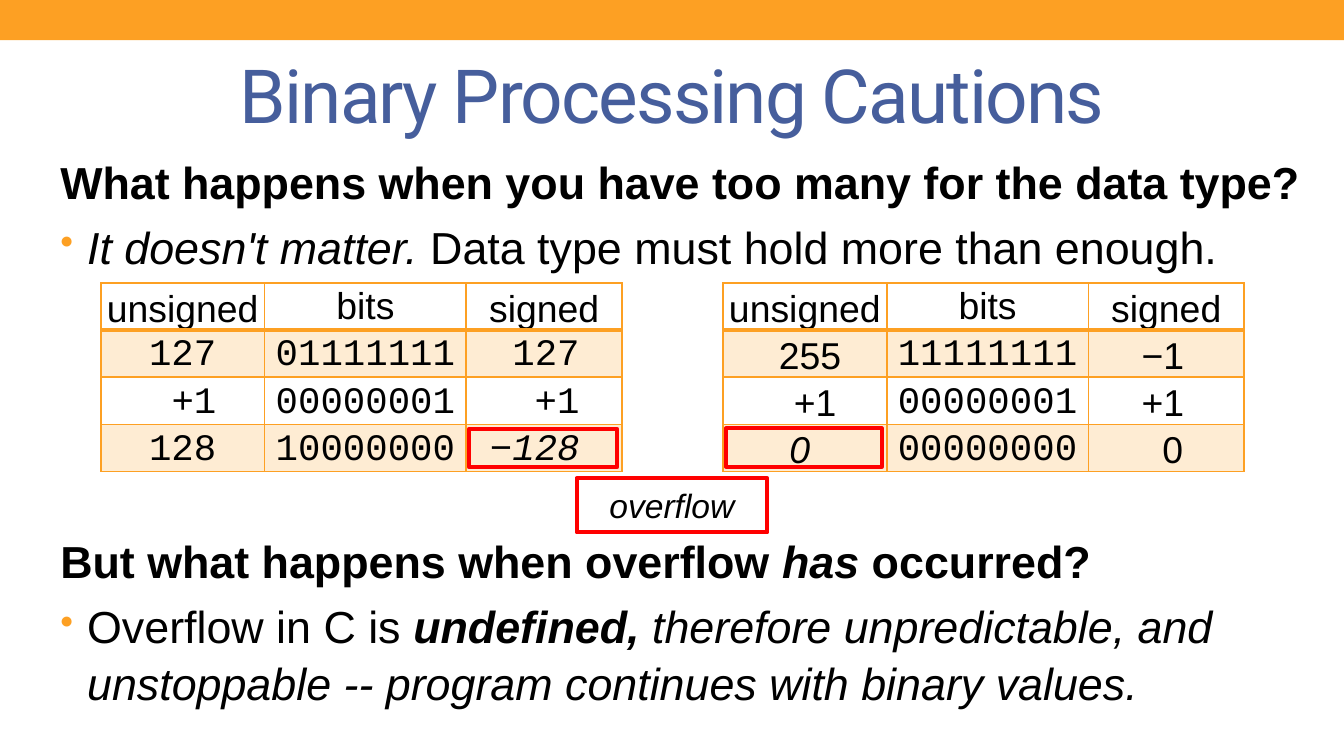
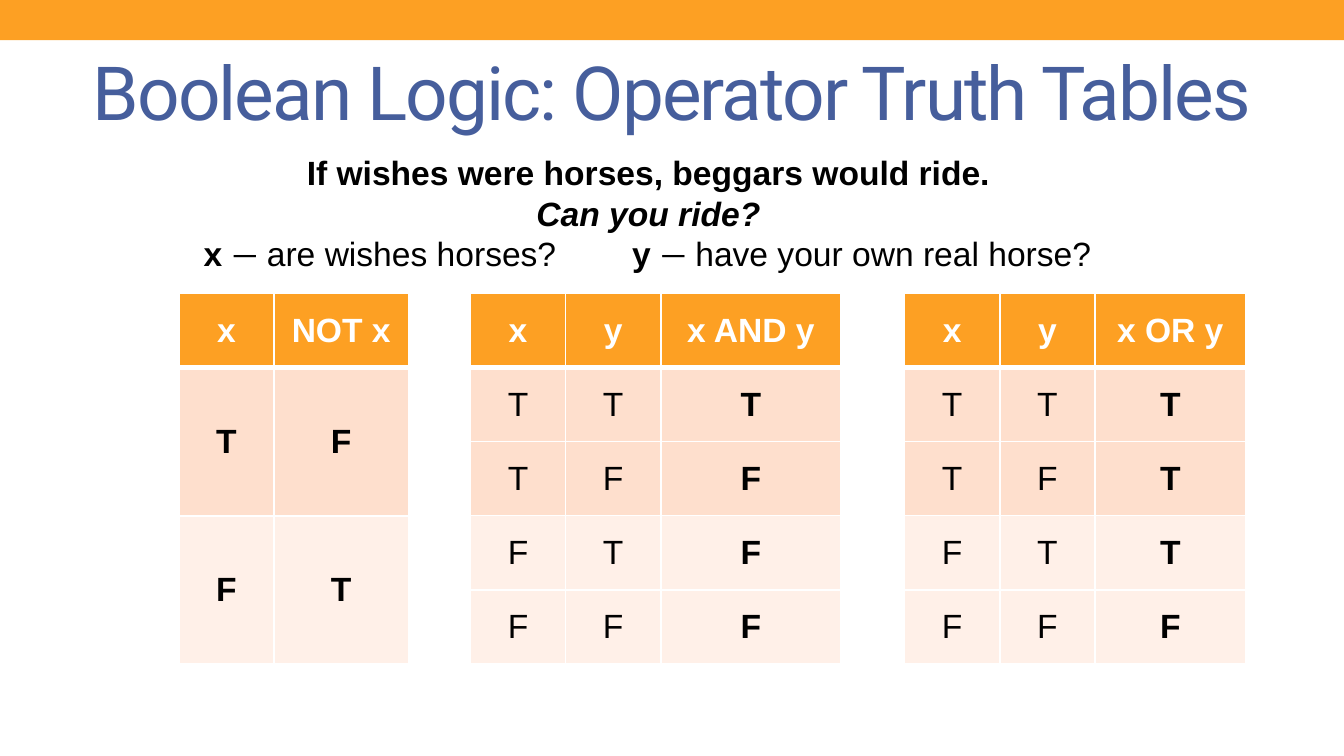
import itertools

import pptx
import pptx.dml.color
import pptx.enum.shapes
import pptx.enum.text
import pptx.oxml
import pptx.oxml.ns
import pptx.util

Pt = pptx.util.Pt
RGB = pptx.dml.color.RGBColor.from_string
ALIGN = pptx.enum.text.PP_ALIGN
ANCHOR = pptx.enum.text.MSO_ANCHOR
RECT = pptx.enum.shapes.MSO_SHAPE.RECTANGLE
NS = pptx.oxml.ns.nsdecls("a")

HUES = {"band": "FDA023", "title": "465E9C", "ink": "000000", "white": "FFFFFF",
        "alert": "FF0000", "peach": "FEDFCD", "pale": "FFF0E8"}
# Flags: m mono, t dash, r title font, b bold, i italic, l left, c middle
FONTS = {"m": "Courier New", "t": "Lato", "r": "Roboto"}


def write(par, runs, size, hue="ink"):
    """Add runs of (text, flags) to a paragraph."""
    for text, flags in runs:
        run = par.add_run()
        run.text = text
        face = next((FONTS[f] for f in flags if f in FONTS), "Arial")
        look = {"name": face, "size": Pt(size), "bold": "b" in flags, "italic": "i" in flags}
        for key, val in look.items():
            setattr(run.font, key, val)
        run.font.color.rgb = RGB(HUES[hue])


def grid(slide, left, top, cols, rows, cells, fills, edge, thick, size, inset, head="ink", alpha=100):
    """Add a table; a cell is (text or runs, flags, left pad, right pad)."""
    table = slide.shapes.add_table(len(rows), len(cols), Pt(left), Pt(top),
                                   Pt(sum(cols)), Pt(sum(rows))).table
    table.first_row = table.horz_banding = False
    for col, wide in zip(table.columns, cols):
        col.width = Pt(wide)
    for row, tall in zip(table.rows, rows):
        row.height = Pt(tall)
    for r, c in itertools.product(range(len(rows)), range(len(cols))):
        text, flags, lead, trail = (*cells[r][c], 0, 0)[:4]
        cell = table.cell(r, c)
        look = {"margin_left": Pt(inset + lead), "margin_right": Pt(inset + trail),
                "margin_top": Pt(inset / 2), "margin_bottom": 0 if inset < 1 else Pt(inset / 2),
                "vertical_anchor": ANCHOR.MIDDLE if "c" in flags else ANCHOR.BOTTOM}
        for key, val in look.items():
            setattr(cell, key, val)
        par = cell.text_frame.paragraphs[0]
        par.alignment = ALIGN.LEFT if "l" in flags else ALIGN.CENTER
        runs = text if isinstance(text, list) else [(text, flags)]
        write(par, runs, size, "ink" if r else head)
        # Fill, then the four borders ahead of it
        props = cell._tc.get_or_add_tcPr()
        if fills[r]:
            cell.fill.solid()
            cell.fill.fore_color.rgb = RGB(HUES[fills[r]])
            if alpha < 100:
                tint = props.find(".//" + pptx.oxml.ns.qn("a:srgbClr"))
                tint.append(pptx.oxml.parse_xml(f'<a:alpha {NS} val="{alpha * 1000}"/>'))
        else:
            cell.fill.background()
        for n, side in enumerate("LRTB"):
            bold = (r, side) in ((0, "B"), (1, "T"))
            props.insert(n, pptx.oxml.parse_xml(
                f'<a:ln{side} {NS} w="{Pt(thick if bold else 1)}"><a:solidFill>'
                f'<a:srgbClr val="{HUES[edge]}"/></a:solidFill></a:ln{side}>'))


deck = pptx.Presentation()
deck.slide_width, deck.slide_height = Pt(720), Pt(405)
plan = deck.slide_layouts[5]

# Titles
slides = []
for name, top in (("Binary Processing Cautions", 21), ("Boolean Logic: Operator Truth Tables", 19.5)):
    slide = deck.slides.add_slide(plan)
    slides.append(slide)
    title = slide.shapes.title
    for key, val in {"left": 36, "top": top, "width": 648, "height": 58}.items():
        setattr(title, key, Pt(val))
    title.text_frame.vertical_anchor = ANCHOR.MIDDLE
    par = title.text_frame.paragraphs[0]
    par.alignment = ALIGN.CENTER
    write(par, [(name, "r")], 40, "title")
    par.runs[0]._r.get_or_add_rPr().set("spc", "-100")
bits, logic = slides

# Shared band, kept on the layout
band = bits.shapes.add_shape(RECT, 0, 0, Pt(720), Pt(21.5))
band.shadow.inherit = False
band.fill.solid()
band.fill.fore_color.rgb = RGB(HUES["band"])
band.line.fill.background()
plan.shapes.element.insert(2, band.element)

# Slide 1: body text, with a gap for the tables
body = bits.shapes.add_textbox(Pt(25.2), Pt(77.8), Pt(694.8), Pt(317.5)).text_frame
body.word_wrap = True
points = [
    (0, False, [("What happens when you have too many for the data type?", "b")]),
    (4.8, True, [("It doesn't matter. ", "i"), ("Data type must hold more than enough.", "")]),
    (138, False, [("But what happens when overflow ", "b"), ("has ", "bi"), ("occurred?", "b")]),
    (4.8, True, [("Overflow in C is ", ""), ("undefined, ", "bi"),
                 ("therefore unpredictable, and unstoppable -- program continues with binary values.", "i")]),
]
for n, (gap, dot, runs) in enumerate(points):
    par = body.add_paragraph() if n else body.paragraphs[0]
    par.line_spacing = 1.05
    par.space_before = Pt(gap)
    if dot:
        props = par._p.get_or_add_pPr()
        props.set("marL", str(Pt(14.4)))
        props.set("indent", str(-Pt(14.4)))
        for tag in (f'<a:buClr {NS}><a:srgbClr val="{HUES["band"]}"/></a:buClr>',
                    f'<a:buSzPct {NS} val="85000"/>', f'<a:buChar {NS} char="•"/>'):
            props.append(pptx.oxml.parse_xml(tag))
    write(par, runs, 24)

# Slide 1: overflow tables
heads = [("unsigned", ""), ("bits", "c"), ("signed", "")]
signed = [
    heads,
    [("127", "m"), ("01111111", "m"), ("127", "ml", 24)],
    [("+1", "m", 12), ("00000001", "m"), ("+1", "ml", 36)],
    [("128", "m"), ("10000000", "m"), ([("−", "m"), ("128", "mi")], "l", 12)],
]
whole = [
    heads,
    [("255", "", 5.6), ("11111111", "m"), ("−1", "l", 27.8)],
    [("+1", "", 11.1), ("00000001", "m"), ("+1", "l", 27.8)],
    [("0", "i", 0, 5.6), ("00000000", "m"), ("0", "l", 38.9)],
]
for left, cells in ((54, signed), (387.3, whole)):
    grid(bits, left, 151.5, [87.8, 108, 83.5], [25.3] * 4, cells,
         [None, "band", None, "band"], "band", 2, 20, 0.7, alpha=20)

# Slide 1: red frames and their key
for left, top, wide, tall, thick, text in (
        (389, 229.5, 83.5, 20.6, 2.08, ""), (251.2, 229.7, 79.4, 20.6, 2.08, ""),
        (308.9, 256.2, 102.2, 29, 2.25, "overflow")):
    frame = bits.shapes.add_shape(RECT, Pt(left), Pt(top), Pt(wide), Pt(tall))
    frame.shadow.inherit = False
    frame.fill.background()
    frame.line.color.rgb = RGB(HUES["alert"])
    frame.line.width = Pt(thick)
    if text:
        par = frame.text_frame.paragraphs[0]
        par.alignment = ALIGN.CENTER
        write(par, [(text, "i")], 18)

# Slide 2: truth tables
pairs = list(itertools.product("TF", repeat=2))
for left, name, wide, rule in ((484.6, "x OR y", 80.7, max), (252, "x AND y", 96.5, min)):
    cells = [[(t, "bc") for t in ("x", "y", name)]]
    cells += [[(a, "c"), (b, "c"), (rule(a, b), "bc")] for a, b in pairs]
    grid(logic, left, 157.2, [51, 51, wide], [39.7] * 5, cells,
         ["band", "peach", "peach", "pale", "pale"], "white", 3, 18, 7.2, head="white")
cells = [[(t, "bc") for t in row] for row in (("x", "NOT x"), "TF", "FT")]
grid(logic, 95.8, 157.2, [51, 72], [39.7, 79.4, 79.4], cells,
     ["band", "peach", "pale"], "white", 3, 18, 7.2, head="white")

# Slide 2: riddle, its last line set on two tab stops
riddle = logic.shapes.add_textbox(Pt(36), Pt(78), Pt(622.8), Pt(72.7)).text_frame
riddle.word_wrap = True
lines = [
    [("If wishes were horses, beggars would ride.", "b")],
    [("Can you ride?", "bi")],
    [("\tx ", "b"), ("— ", "t"), ("are wishes horses?", ""),
     ("\ty ", "b"), ("— ", "t"), ("have your own real horse?", "")],
]
for n, runs in enumerate(lines):
    par = riddle.add_paragraph() if n else riddle.paragraphs[0]
    par.alignment = ALIGN.CENTER if n < 2 else ALIGN.LEFT
    if n == 2:
        stops = "".join(f'<a:tab pos="{Pt(pos)}" algn="l"/>' for pos in (66, 295.5))
        par._p.get_or_add_pPr().append(pptx.oxml.parse_xml(f"<a:tabLst {NS}>{stops}</a:tabLst>"))
    write(par, runs, 18)

deck.save("out.pptx")
